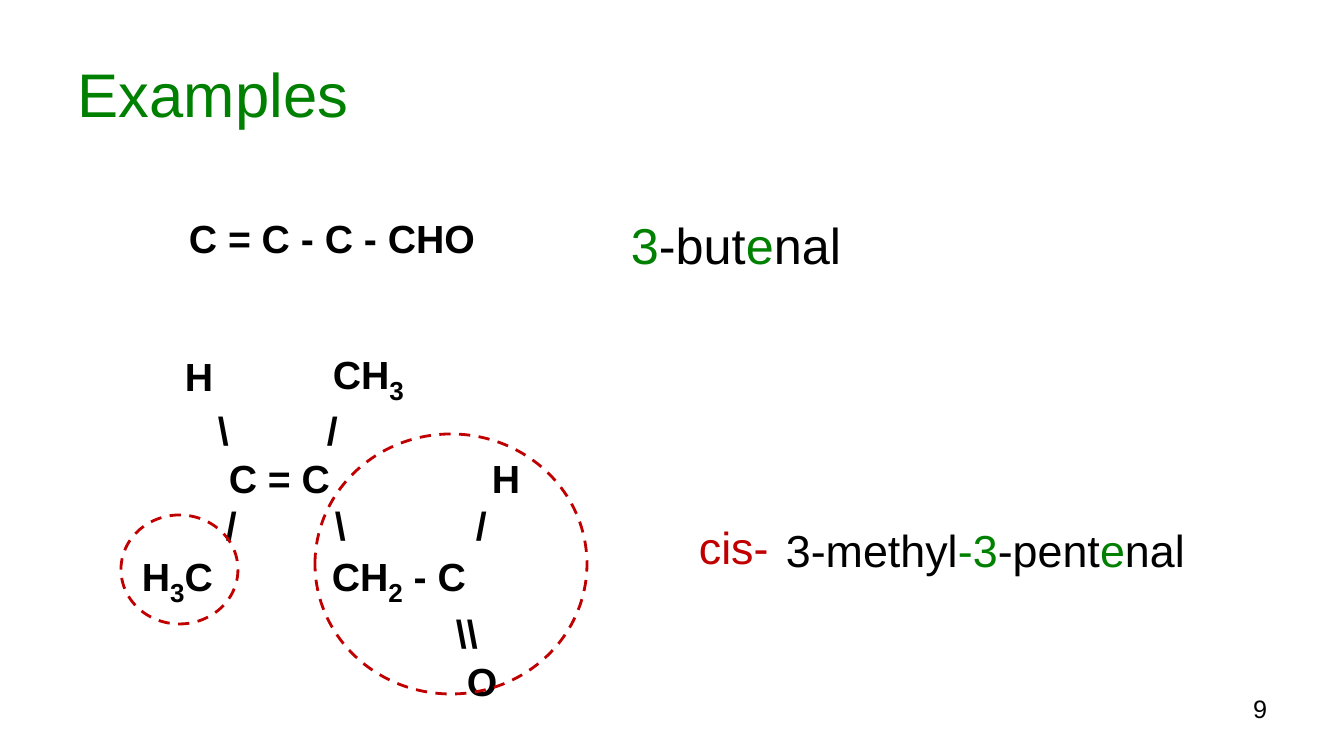
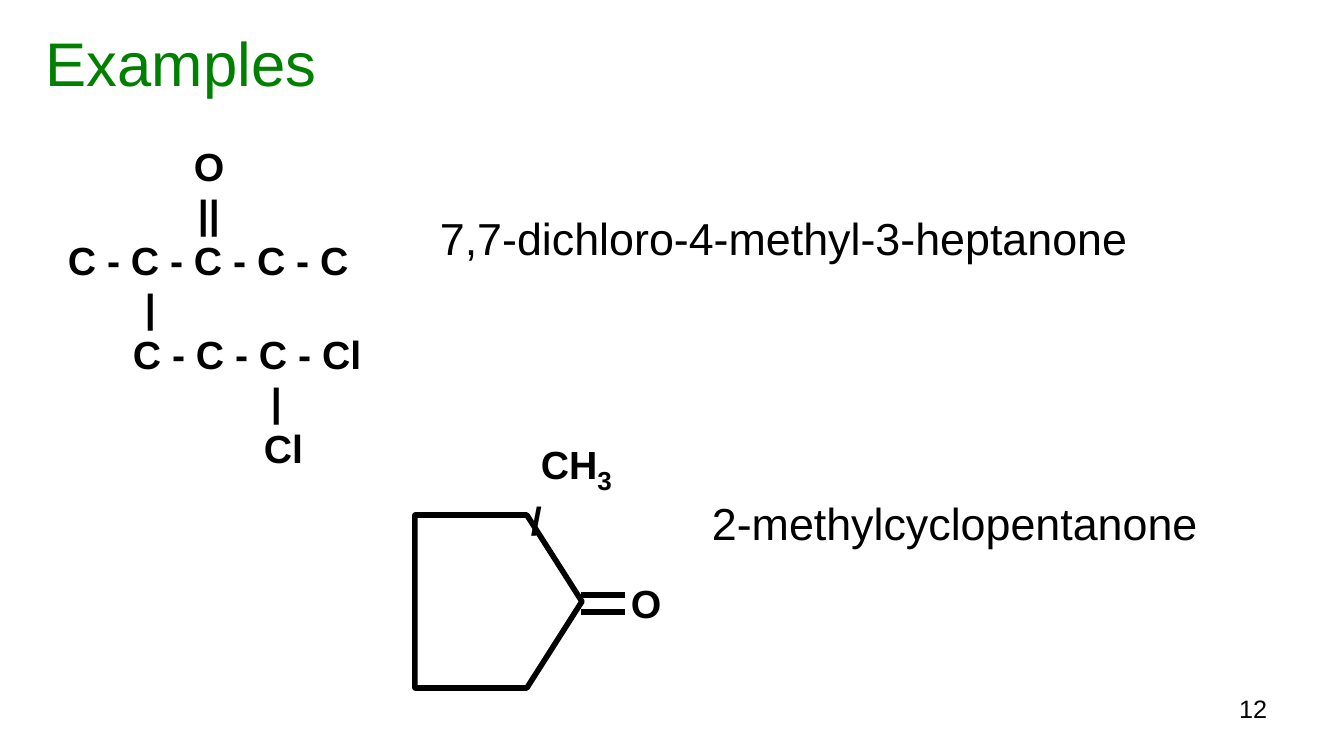
from pptx import Presentation
from pptx.dml.color import RGBColor
from pptx.enum.dml import MSO_LINE
from pptx.enum.shapes import MSO_CONNECTOR, MSO_SHAPE
from pptx.enum.text import MSO_ANCHOR, PP_ALIGN
from pptx.oxml.ns import qn
from pptx.util import Pt
from lxml.etree import SubElement

WIDE, HIGH = 1344, 756
SCALE = 12192000 / WIDE
FONT = "Arial"
BLACK = RGBColor(0, 0, 0)
GREEN = RGBColor(0, 128, 0)
RED = RGBColor(192, 0, 0)
PAD = 10  # side inset of a text box


def px(*nums):
    return [round(n * SCALE) for n in nums]


def write(slide, box, runs, size=32, color=BLACK, bold=False,
          align=PP_ALIGN.LEFT, anchor=MSO_ANCHOR.TOP):
    """Runs are a string or a list of (text, own format) pairs."""
    frame = slide.shapes.add_textbox(*px(*box)).text_frame
    frame.word_wrap = True
    frame.vertical_anchor = anchor
    para = frame.paragraphs[0]
    para.alignment = align
    for text, own in [(runs, {})] if isinstance(runs, str) else runs:
        run = para.add_run()
        run.text = text
        font = run.font
        font.name = FONT
        font.size = Pt(own.get("size", size))
        font.bold = bold
        font.color.rgb = own.get("color", color)
        if "base" in own:
            font._element.set("baseline", str(own["base"]))


def outline(slide, kind, box, color, width, dash=None):
    shape = slide.shapes.add_shape(kind, *px(*box))
    shape.shadow.inherit = False
    shape.fill.background()
    shape.line.color.rgb = color
    shape.line.width = Pt(width)
    if dash:
        shape.line.dash_style = dash
    return shape


def bond(slide, x, y, end):
    line = slide.shapes.add_connector(MSO_CONNECTOR.STRAIGHT, *px(x, y, end, y))
    line.line.color.rgb = BLACK
    line.line.width = Pt(4)
    SubElement(line._element.spPr, qn("a:effectLst"))


def atoms(slide, left, top, parts):
    """Each part is (x, y, text): text start and mid height; _ marks a subscript."""
    for x, y, text in parts:
        head, *rest = text.split("_")
        runs = [(head, {})]
        for bit in rest:
            runs.append((bit[0], {"size": 32, "base": -25000}))
            if bit[1:]:
                runs.append((bit[1:], {}))
        rise = 37 if rest else 30
        box = (left + x - PAD, top + y - rise, 22 * len(text) + 32, 57)
        write(slide, box, runs, size=28, bold=True)


def page(deck, number, box):
    slide = deck.slides.add_slide(deck.slide_layouts[6])
    write(slide, box, "Examples", size=44, color=GREEN, anchor=MSO_ANCHOR.MIDDLE)
    write(slide, (964, 688, 313, 52), str(number), size=18, align=PP_ALIGN.RIGHT)
    return slide


def ring(slide, left, top):
    # Five-sided ring with its double bond
    wide, high = 167, 173
    shape = outline(slide, MSO_SHAPE.PENTAGON, (left, top, wide, high), BLACK, 4)
    shape.adjustments[0] = 0.33
    for y in (80, 97):
        bond(slide, left + wide - 1, top + y, left + 210)
    atoms(slide, left, top, [(126, -48, "CH_3"), (116, 6, "/"), (216, 89, "O")])


def enals(deck):
    slide = page(deck, 9, (68, 30, 1210, 126))
    green = {"color": GREEN}

    # Structures
    atoms(slide, 189, 239, [(0, 0, "C = C - C - CHO")])
    atoms(slide, 142, 377, [
        (43, 0, "H"), (191, 0, "CH_3"),
        (76, 54, "\\"), (185, 54, "/"),
        (87, 102, "C = C"), (350, 102, "H"),
        (84, 149, "/"), (193, 149, "\\"), (334, 149, "/"),
        (0, 202, "H_3C"), (190, 202, "CH_2 - C"),
        (314, 257, "\\\\"), (325, 305, "O")])

    # Names
    write(slide, (621, 209, 238, 72),
          [("3", green), ("-but", {}), ("e", green), ("nal", {})], size=36)
    write(slide, (689, 515, 100, 64), "cis-", color=RED)
    write(slide, (776, 518, 440, 64),
          [("3-methyl", {}), ("-3", green), ("-pent", {}), ("e", green), ("nal", {})])

    # Groups on the same side
    for box in ((315, 434, 272, 260), (121, 515, 117, 109)):
        outline(slide, MSO_SHAPE.OVAL, box, RED, 2, MSO_LINE.DASH)


def ketones(deck):
    slide = page(deck, 12, (36, 19, 857, 86))

    # Structures
    row = 47
    atoms(slide, 68, 167, [(x, n * row, text) for n, (x, text) in enumerate([
        (126, "O"), (130, "||"), (0, "C - C - C - C - C"), (77, "|"),
        (65, "C - C - C - Cl"), (203, "|"), (196, "Cl")])])
    ring(slide, 415, 515)

    # Names
    write(slide, (430, 206, 730, 64), "7,7-dichloro-4-methyl-3-heptanone")
    write(slide, (702, 491, 522, 64), "2-methylcyclopentanone")


def main():
    deck = Presentation()
    deck.slide_width, deck.slide_height = px(WIDE, HIGH)
    enals(deck)
    ketones(deck)
    deck.save("out.pptx")


if __name__ == "__main__":
    main()
